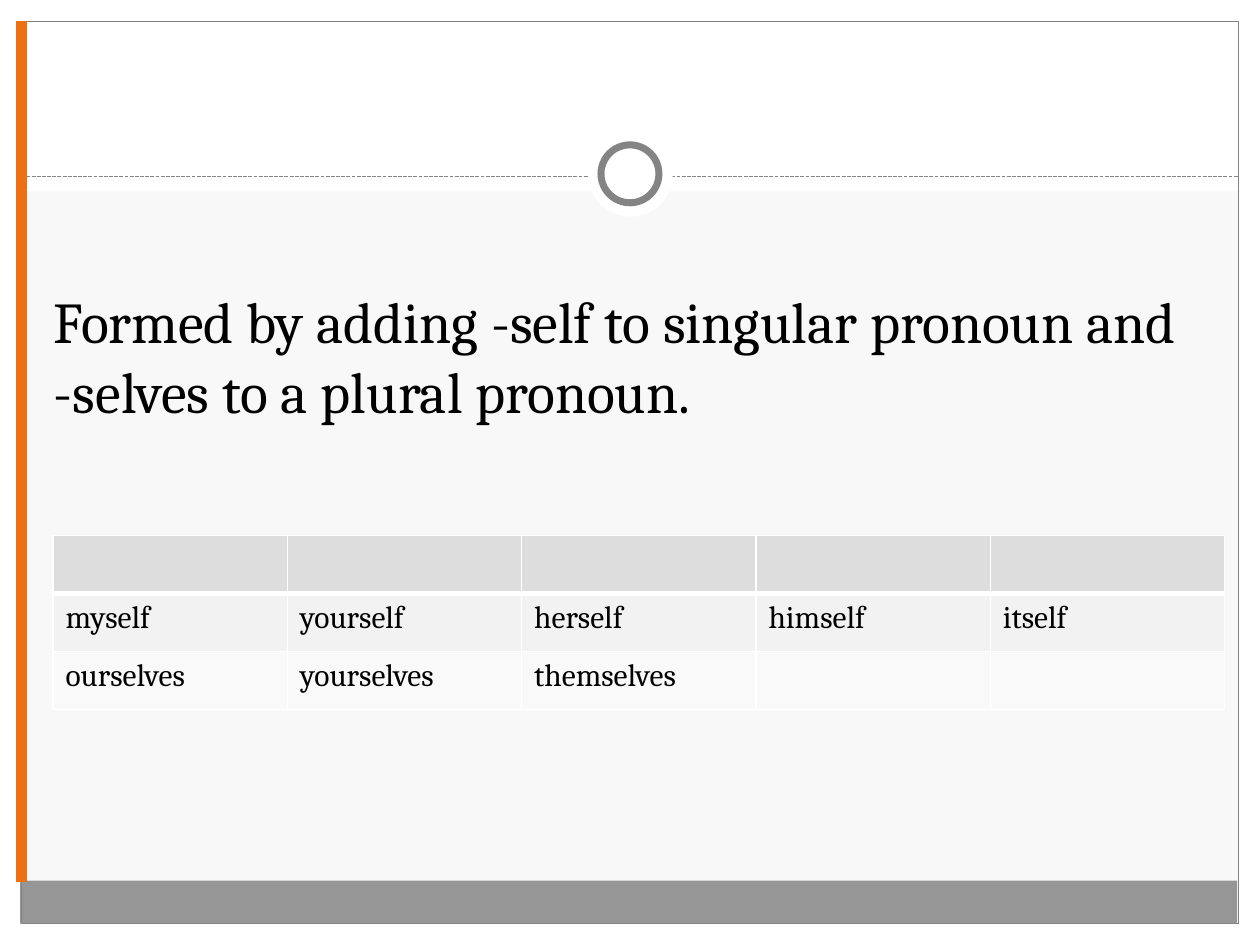
from dataclasses import dataclass
from typing import Optional

from lxml import etree
from pptx import Presentation
from pptx.dml.color import RGBColor
from pptx.enum.dml import MSO_LINE
from pptx.enum.shapes import MSO_CONNECTOR, MSO_SHAPE
from pptx.enum.text import MSO_ANCHOR, PP_ALIGN
from pptx.oxml.ns import qn
from pptx.util import Inches, Pt

RECTANGLE = MSO_SHAPE.RECTANGLE
OVAL = MSO_SHAPE.OVAL
STRAIGHT = MSO_CONNECTOR.STRAIGHT
DASH = MSO_LINE.SQUARE_DOT
SOLID = MSO_LINE.SOLID
BOTTOM = MSO_ANCHOR.BOTTOM
LEFT = PP_ALIGN.LEFT

FONT = "Cambria"
COLORS = {
    "background": "F8F8F8",
    "white": "FFFFFF",
    "footer": "969696",
    "outline": "848484",
    "accent": "EE7012",
    "text": "000000",
    "header": "DDDDDD",
    "singular": "F2F2F2",
    "plural": "F9F9F9",
}
TITLE = "Formed by adding -self to singular pronoun and -selves to a plural pronoun."
ROWS = [
    ("header", [""] * 5),
    ("singular", ["myself", "yourself", "herself", "himself", "itself"]),
    ("plural", ["ourselves", "yourselves", "themselves", "", ""]),
]


@dataclass
class Panel:
    left: float
    top: float
    width: float
    height: float
    fill: Optional[str] = "white"
    line_width: float = 0
    kind: int = RECTANGLE


@dataclass
class Rule:
    start: tuple[float, float]
    end: tuple[float, float]
    color: str
    width: float
    dash: int = SOLID


PANELS = [
    Panel(0, 7.33, 10, 0.17),
    Panel(0, 0, 10, 1.52),
    Panel(0, 0, 0.17, 7.5),
    Panel(9.83, 0, 0.17, 7.5),
    Panel(0.16, 6.99, 9.66, 0.34, "footer"),
    Panel(0.17, 0.17, 9.66, 7.16, None, 0.75),
]
DIVIDER = Rule((0.17, 1.4), (9.83, 1.4), "outline", 0.75, DASH)
CIRCLES = [
    Panel(4.67, 1.05, 0.67, 0.67, kind=OVAL),
    Panel(4.77, 1.15, 0.46, 0.46, line_width=4, kind=OVAL),
]
ACCENT_BAR = Rule((0.17, 0.17), (0.17, 7), "accent", 6)


def rgb(name: str) -> RGBColor:
    return RGBColor.from_string(COLORS[name])


def paint(fill, name: str) -> None:
    fill.solid()
    fill.fore_color.rgb = rgb(name)


def draw_panel(slide, panel: Panel) -> None:
    box = map(Inches, (panel.left, panel.top, panel.width, panel.height))
    shape = slide.shapes.add_shape(panel.kind, *box)
    shape.shadow.inherit = False
    if panel.fill:
        paint(shape.fill, panel.fill)
    else:
        shape.fill.background()
    if panel.line_width:
        shape.line.color.rgb = rgb("outline")
        shape.line.width = Pt(panel.line_width)
    else:
        shape.line.fill.background()


def draw_rule(slide, rule: Rule) -> None:
    points = map(Inches, (*rule.start, *rule.end))
    connector = slide.shapes.add_connector(STRAIGHT, *points)
    connector.line.color.rgb = rgb(rule.color)
    connector.line.width = Pt(rule.width)
    connector.line.dash_style = rule.dash
    etree.SubElement(connector._element.spPr, qn("a:effectLst"))


def write_text(frame, text: str, size: float) -> None:
    paragraph = frame.paragraphs[0]
    paragraph.alignment = LEFT
    run = paragraph.add_run()
    run.text = text
    for name, value in {"name": FONT, "size": Pt(size)}.items():
        setattr(run.font, name, value)
    run.font.color.rgb = rgb("text")


def draw_title(slide) -> None:
    box = map(Inches, (0.33, 1.75, 9.33, 1.67))
    frame = slide.shapes.add_textbox(*box).text_frame
    for name, value in {"word_wrap": True, "vertical_anchor": BOTTOM}.items():
        setattr(frame, name, value)
    write_text(frame, TITLE, 33)


def set_borders(cell, widths: dict[str, float]) -> None:
    properties = cell._tc.get_or_add_tcPr()
    for index, (side, width) in enumerate(widths.items()):
        border = etree.Element(qn(f"a:ln{side}"), w=str(Pt(width)))
        fill = etree.SubElement(border, qn("a:solidFill"))
        etree.SubElement(fill, qn("a:srgbClr"), val=COLORS["white"])
        properties.insert(index, border)


def draw_pronoun_table(slide) -> None:
    box = map(Inches, (0.42, 4.25, 9.3, 1.38))
    table = slide.shapes.add_table(len(ROWS), len(ROWS[0][1]), *box).table
    for row_index, (color, words) in enumerate(ROWS):
        borders = {
            "L": 1,
            "R": 1,
            "T": 3 if row_index == 1 else 1,
            "B": 3 if row_index == 0 else 1,
        }
        for column_index, word in enumerate(words):
            cell = table.cell(row_index, column_index)
            paint(cell.fill, color)
            set_borders(cell, borders)
            if word:
                write_text(cell.text_frame, word, 18)


def main() -> None:
    presentation = Presentation()
    presentation.slide_width = Inches(10)
    presentation.slide_height = Inches(7.5)
    slide = presentation.slides.add_slide(presentation.slide_layouts[6])
    paint(slide.background.fill, "background")
    for panel in PANELS:
        draw_panel(slide, panel)
    draw_rule(slide, DIVIDER)
    for circle in CIRCLES:
        draw_panel(slide, circle)
    draw_title(slide)
    draw_pronoun_table(slide)
    draw_rule(slide, ACCENT_BAR)
    presentation.save("out.pptx")


if __name__ == "__main__":
    main()
